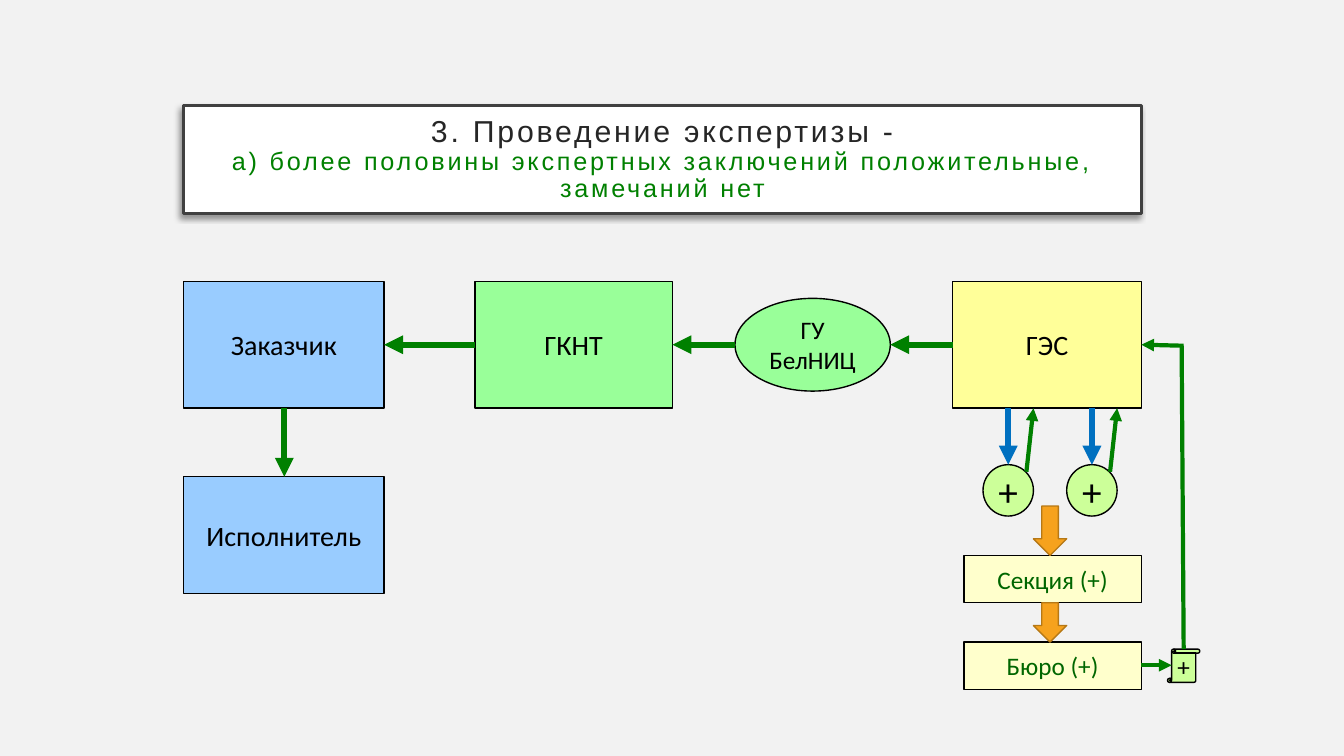
import pptx
import pptx.util
import pptx.dml.color
import pptx.enum.shapes
import pptx.enum.text
import pptx.oxml
import pptx.oxml.ns

PX = 9144
SHAPE = pptx.enum.shapes.MSO_SHAPE
CENTER = pptx.enum.text.PP_ALIGN.CENTER
MIDDLE = pptx.enum.text.MSO_ANCHOR.MIDDLE
GREEN, BLUE, BLACK = "008000", "0070C0", "000000"
SKY, MINT, LIME = "99CCFF", "99FF99", "CCFF99"
DRAWING_NS = pptx.oxml.ns.nsdecls("a")


def px(length):
    return pptx.util.Emu(length * PX)


def colour(value):
    return pptx.dml.color.RGBColor.from_string(value)


def paint(shape, fill, line, width=1):
    shape.fill.solid()
    shape.fill.fore_color.rgb = colour(fill)
    shape.line.color.rgb = colour(line)
    shape.line.width = pptx.util.Pt(width)


def style_text(paragraph, font, size, ink):
    paragraph.alignment = CENTER
    for run in paragraph.runs:
        run.font.name = font
        run.font.size = pptx.util.Pt(size)
        run.font.color.rgb = colour(ink)


def set_frame(frame, side=0):
    frame.word_wrap = True
    frame.auto_size = pptx.enum.text.MSO_AUTO_SIZE.NONE
    frame.vertical_anchor = MIDDLE
    frame.margin_left = frame.margin_right = px(side)
    frame.margin_top = frame.margin_bottom = 0


def node(slide, kind, box, fill, label="", size=20, ink=BLACK, line=BLACK):
    shape = slide.shapes.add_shape(kind, *map(px, box))
    shape.shadow.inherit = False
    paint(shape, fill, line)
    if label:
        set_frame(shape.text_frame)
        shape.text_frame.text = label
        style_text(shape.text_frame.paragraphs[0], "Calibri", size, ink)
    return shape


def arrow(slide, start, end, ink=GREEN, width=4.5, head=True):
    link = slide.shapes.add_connector(
        pptx.enum.shapes.MSO_CONNECTOR.STRAIGHT, *map(px, start + end))
    link.line.color.rgb = colour(ink)
    link.line.width = pptx.util.Pt(width)
    if head:
        link.line._get_or_add_ln().append(
            pptx.oxml.parse_xml(f'<a:tailEnd {DRAWING_NS} type="triangle"/>'))
    link._element.spPr.append(pptx.oxml.parse_xml(f"<a:effectLst {DRAWING_NS}/>"))


def title_banner(slide, box):
    title = slide.shapes.title
    title.left, title.top, title.width, title.height = map(px, box)
    paint(title, "FFFFFF", "404040", 2.25)
    title._element.spPr.append(pptx.oxml.parse_xml(
        f'<a:effectLst {DRAWING_NS}><a:outerShdw blurRad="50800" dist="38100" dir="8100000">'
        '<a:srgbClr val="000000"><a:alpha val="40000"/></a:srgbClr>'
        '</a:outerShdw></a:effectLst>'))
    set_frame(title.text_frame, 20)
    title.text_frame.text = (
        "3. Проведение экспертизы -\n"
        "а) более половины экспертных заключений положительные, замечаний нет")
    for paragraph, size, ink in zip(title.text_frame.paragraphs, (21.6, 18), ("262626", GREEN)):
        style_text(paragraph, "Arial", size, ink)
        paragraph.line_spacing = 0.9
        paragraph.space_before = pptx.util.Pt(0)
        for run in paragraph.runs:
            run.font._element.set("spc", "200")


def approval_chain(slide, box):
    left, top, width, height = box
    middle = top + height // 2
    customer, committee, institute, council = left, left + 289, left + 547, left + 763
    node(slide, SHAPE.RECTANGLE, (customer, top, 199, height), SKY, "Заказчик")
    node(slide, SHAPE.RECTANGLE, (committee, top, 196, height), MINT, "ГКНТ")
    node(slide, SHAPE.OVAL, (institute, middle - 46, 154, 92), MINT, "ГУ БелНИЦ", 18)
    node(slide, SHAPE.RECTANGLE, (council, top, left + width - council, height), "FFFF99", "ГЭС")
    node(slide, SHAPE.RECTANGLE, (customer, top + 194, 199, 116), SKY, "Исполнитель")
    for start, end in ((committee, customer + 199),
                       (institute, committee + 196),
                       (council, institute + 154)):
        arrow(slide, (start, middle), (end, middle))
    arrow(slide, (customer + 100, top + height), (customer + 100, top + 194))


def review_loop(slide, box):
    left, top, width, height = box
    right = left + 176
    for expert in (left + 19, left + 102):
        node(slide, SHAPE.OVAL, (expert, top + 56, 50, 51), LIME, "+", 28)
        arrow(slide, (expert + 25, top), (expert + 25, top + 56), BLUE)
        arrow(slide, (expert + 43, top + 63), (expert + 50, top), width=3)
    stages = (("Секция (+)", top + 146, 49), ("Бюро (+)", top + 232, 39))
    for label, stage, drop in stages:
        node(slide, SHAPE.RECTANGLE, (left, stage, 176, 47), "FFFFCC", label, 18, "006600")
        node(slide, SHAPE.DOWN_ARROW, (left + 69, stage - drop, 33, drop), "F6A21D", line="B67815")
    scroll = left + width - 32
    node(slide, SHAPE.VERTICAL_SCROLL, (scroll, top + height - 40, 32, 33), LIME, "+", 18)
    arrow(slide, (right, top + 255), (scroll + 4, top + 255), width=3)
    arrow(slide, (scroll + 16, top + height - 40), (scroll + 14, top - 62), width=3, head=False)
    arrow(slide, (scroll + 16, top - 62), (right, top - 63), width=3)


def main():
    deck = pptx.Presentation()
    deck.slide_width, deck.slide_height = px(1333), px(750)
    slide = deck.slides.add_slide(deck.slide_layouts[5])
    slide.background.fill.solid()
    slide.background.fill.fore_color.rgb = colour("F2F2F2")
    title_banner(slide, (182, 105, 950, 107))
    approval_chain(slide, (182, 279, 950, 126))
    review_loop(slide, (956, 405, 234, 279))
    deck.save("out.pptx")


if __name__ == "__main__":
    main()
